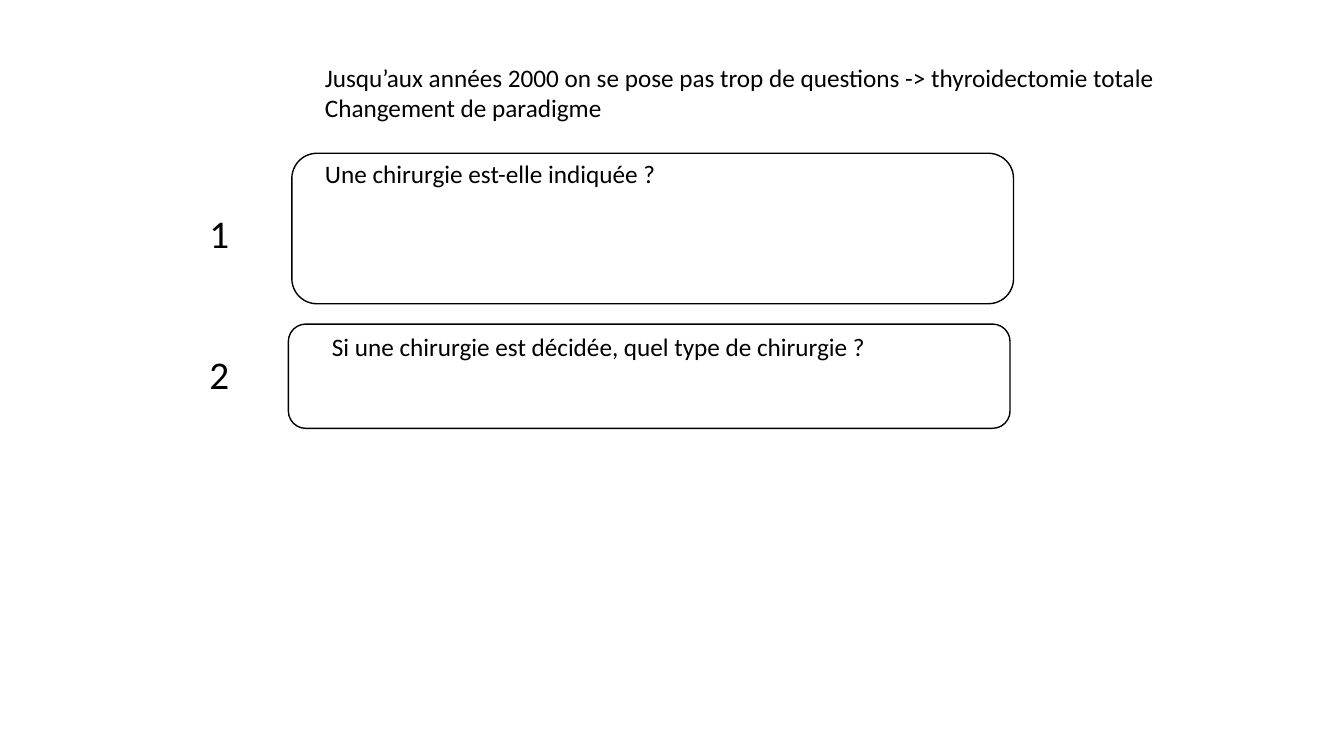
from pptx import Presentation
from pptx.dml.color import RGBColor
from pptx.enum import shapes
from pptx.util import Pt

COLORS = {"ink": "000000"}
FONT = "Calibri"


def add_text(slide, box, lines, size=18, gap=0):
    """Place one paragraph per line, with gap points between them."""
    tf = slide.shapes.add_textbox(*map(Pt, box)).text_frame
    tf.word_wrap = True
    for i, line in enumerate(lines):
        p = tf.paragraphs[0] if i == 0 else tf.add_paragraph()
        p.text = line
        p.font.name = FONT
        p.font.size = Pt(size)
        p.font.color.rgb = RGBColor.from_string(COLORS["ink"])
        if i:
            p.space_before = Pt(gap)


def add_question(slide, box, question, text_offset, text_width):
    """Draw a rounded frame with its question inside, offset from the frame's corner."""
    left, top, width, height = box
    dx, dy = text_offset
    add_text(slide, (left + dx, top + dy, text_width, 51), [question])
    sp = slide.shapes.add_shape(shapes.MSO_SHAPE.ROUNDED_RECTANGLE, *map(Pt, box))
    sp.shadow.inherit = False
    sp.fill.background()
    sp.line.color.rgb = RGBColor.from_string(COLORS["ink"])
    sp.line.width = Pt(1)


def main():
    prs = Presentation()
    prs.slide_width, prs.slide_height = Pt(960), Pt(540)
    slide = prs.slides.add_slide(prs.slide_layouts[6])

    add_text(slide, (225, 41, 609, 51), [
        "Jusqu’aux années 2000 on se pose pas trop de questions -> thyroidectomie totale",
        "Changement de paradigme",
    ])
    add_question(slide, (208.5, 109.5, 515.5, 107.5),
                 "Une chirurgie est-elle indiquée ?", (16.5, 0), 254)
    add_question(slide, (206, 231.5, 515.5, 74.5),
                 "Si une chirurgie est décidée, quel type de chirurgie ?", (24, 1.5), 401)
    add_text(slide, (142.5, 146, 29, 245), ["1", "2"], size=28, gap=67)

    prs.save("out.pptx")


if __name__ == "__main__":
    main()
